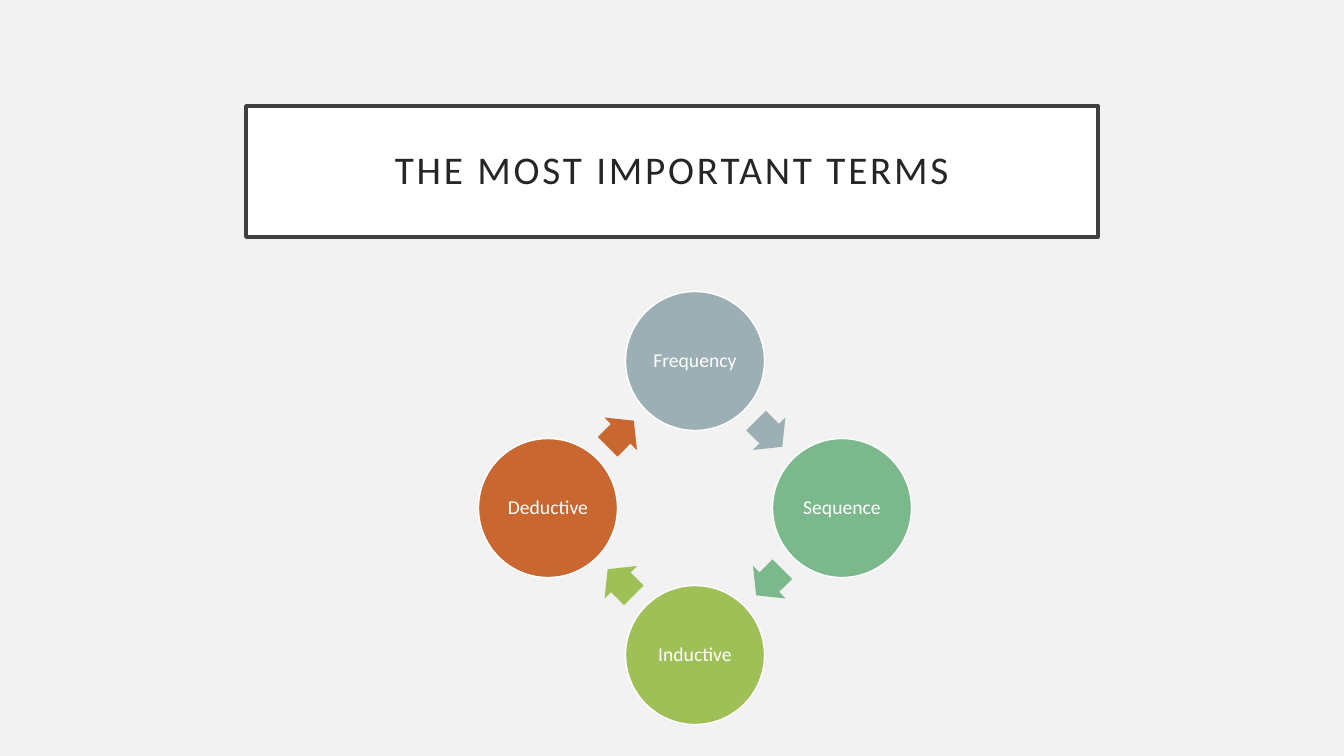
"""Builds a slide with a title box and a cycle of four terms."""
from math import cos, radians, sin

from pptx import Presentation
from pptx.dml.color import RGBColor
from pptx.enum.shapes import MSO_SHAPE
from pptx.enum.text import MSO_ANCHOR, MSO_AUTO_SIZE, PP_ALIGN
from pptx.util import Emu, Pt

BACKGROUND = RGBColor(0xF2, 0xF2, 0xF2)
WHITE = RGBColor(0xFF, 0xFF, 0xFF)
BORDER = RGBColor(0x40, 0x40, 0x40)
INK = RGBColor(0x26, 0x26, 0x26)
GREY = RGBColor(0x9B, 0xAF, 0xB5)
GREEN = RGBColor(0x7B, 0xB8, 0x8C)
LIME = RGBColor(0x9F, 0xC0, 0x57)
ORANGE = RGBColor(0xC9, 0x67, 0x31)

TITLE = "THE MOST IMPORTANT TERMS"
TERMS = [("Frequency", GREY), ("Sequence", GREEN), ("Inductive", LIME), ("Deductive", ORANGE)]

SLIDE_W, SLIDE_H = 1344, 756
TITLE_BOX = (246, 106, 852, 131)
CENTER_X, CENTER_Y = 695, 508
CIRCLE, CIRCLE_ORBIT = 139, 147
ARROW_W, ARROW_H, ARROW_ORBIT = 37, 46, 105
TITLE_INSET, TERM_INSET = 20, 2


def px(n):
    return Emu(round(n * 914400 / 100.8))


def write(sp, text, size, color, inset):
    tf = sp.text_frame
    frame_format = {"word_wrap": True, "auto_size": MSO_AUTO_SIZE.NONE,
                    "vertical_anchor": MSO_ANCHOR.MIDDLE}
    for side in ("left", "top", "right", "bottom"):
        frame_format["margin_" + side] = px(inset)
    p = tf.paragraphs[0]
    r = p.add_run()
    r.text = text
    p_format = {"alignment": PP_ALIGN.CENTER, "line_spacing": 0.9}
    font_format = {"name": "Calibri", "size": Pt(size)}
    for target, values in ((tf, frame_format), (p, p_format), (r.font, font_format)):
        for name, value in values.items():
            setattr(target, name, value)
    r.font.color.rgb = color
    return r


def paint(sp, fill, line=None, width=1):
    sp.fill.solid()
    sp.fill.fore_color.rgb = fill
    if line is None:
        sp.line.fill.background()
    else:
        sp.line.color.rgb = line
        sp.line.width = Pt(width)


def add_on_orbit(s, kind, angle, orbit, w, h):
    x = CENTER_X + orbit * cos(radians(angle)) - w / 2
    y = CENTER_Y + orbit * sin(radians(angle)) - h / 2
    sp = s.shapes.add_shape(kind, px(x), px(y), px(w), px(h))
    sp.shadow.inherit = False
    return sp


def add_title(s):
    sp = s.shapes.title
    sp.left, sp.top, sp.width, sp.height = map(px, TITLE_BOX)
    paint(sp, WHITE, BORDER, 2.5)
    r = write(sp, TITLE, 28, INK, TITLE_INSET)
    r.font._element.set("spc", "200")


def add_cycle(s):
    step = 360 / len(TERMS)
    for i, (term, color) in enumerate(TERMS):
        angle = i * step - 90
        circle = add_on_orbit(s, MSO_SHAPE.OVAL, angle, CIRCLE_ORBIT, CIRCLE, CIRCLE)
        paint(circle, color, WHITE)
        write(circle, term, 14, WHITE, TERM_INSET)
        between = angle + step / 2
        arrow = add_on_orbit(s, MSO_SHAPE.RIGHT_ARROW, between, ARROW_ORBIT, ARROW_W, ARROW_H)
        arrow.adjustments[0], arrow.adjustments[1] = 0.6, 0.5
        arrow.rotation = between + 90
        paint(arrow, color)


def main():
    prs = Presentation()
    prs.slide_width, prs.slide_height = px(SLIDE_W), px(SLIDE_H)
    s = prs.slides.add_slide(prs.slide_layouts[5])
    s.background.fill.solid()
    s.background.fill.fore_color.rgb = BACKGROUND
    add_title(s)
    add_cycle(s)
    prs.save("out.pptx")


if __name__ == "__main__":
    main()
